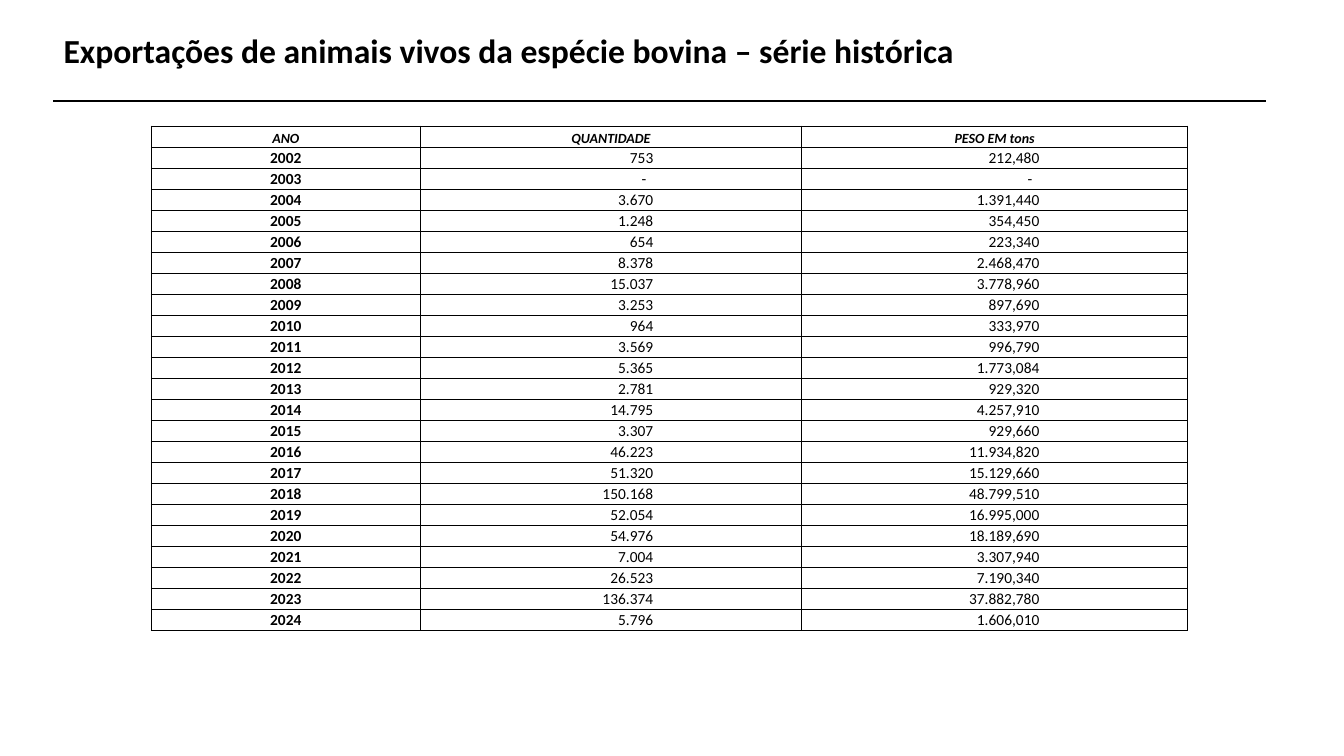
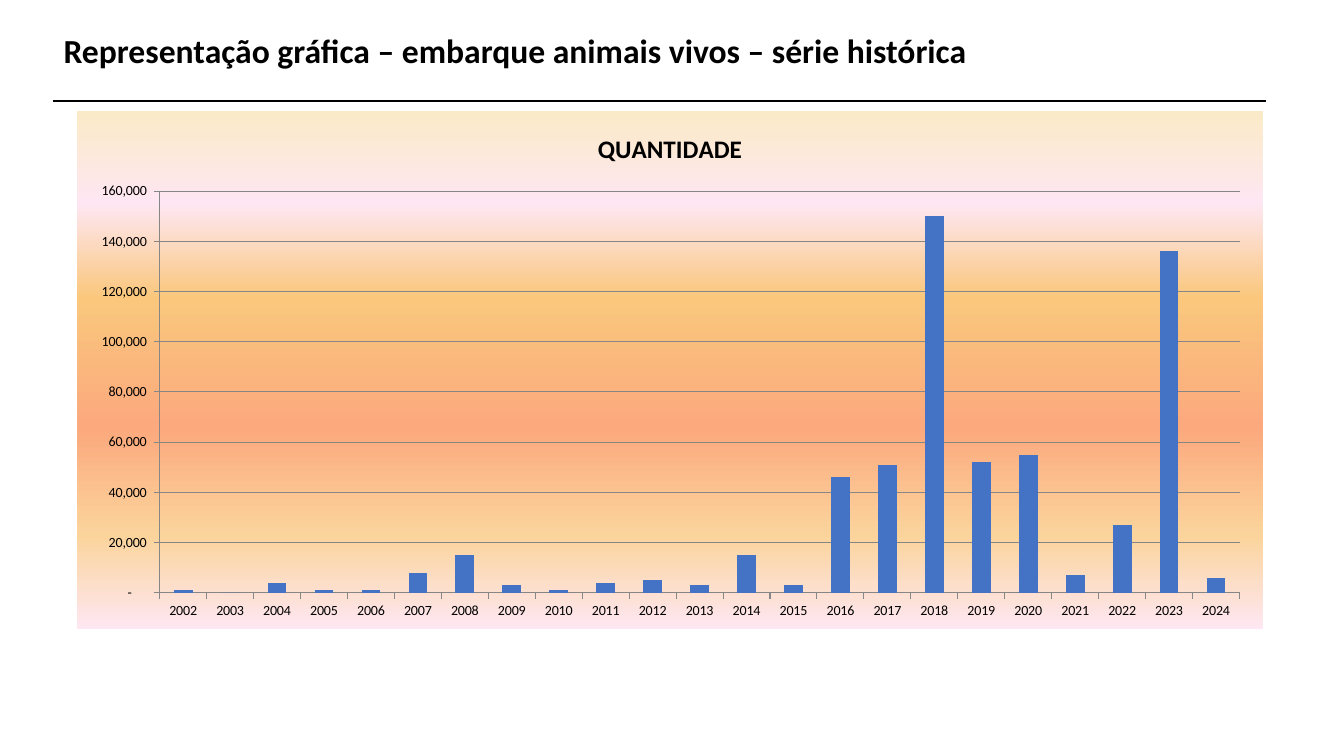
from lxml import etree
from pptx import Presentation
from pptx.chart.data import CategoryChartData
from pptx.dml.color import RGBColor
from pptx.enum.chart import XL_CHART_TYPE, XL_TICK_MARK
from pptx.enum.shapes import MSO_CONNECTOR
from pptx.enum.text import MSO_ANCHOR, MSO_AUTO_SIZE, PP_ALIGN
from pptx.oxml import parse_xml
from pptx.oxml.ns import nsdecls, qn
from pptx.util import Inches, Pt

COLUMN_CHART = XL_CHART_TYPE.COLUMN_CLUSTERED
TICK_OUTSIDE = XL_TICK_MARK.OUTSIDE
STRAIGHT = MSO_CONNECTOR.STRAIGHT
TOP, BOTTOM = MSO_ANCHOR.TOP, MSO_ANCHOR.BOTTOM
NO_AUTO_SIZE = MSO_AUTO_SIZE.NONE
LEFT, CENTER, RIGHT = PP_ALIGN.LEFT, PP_ALIGN.CENTER, PP_ALIGN.RIGHT

FONT = "Calibri"
COLORS = {"text": "000000", "bar": "4472C4", "grid": "868686"}
# Chart background: position in percent and colour
GRADIENT = [(0, "FBEAC7"), (18, "FEE7F2"), (36, "FAC77D"),
            (61, "FBA97D"), (82, "FBD49C"), (100, "FEE7F2")]

HEADERS = ["ANO", "QUANTIDADE", "PESO EM tons"]
EXPORTS = [
    ("2002", "753", "212,480"),
    ("2003", "-", "-"),
    ("2004", "3.670", "1.391,440"),
    ("2005", "1.248", "354,450"),
    ("2006", "654", "223,340"),
    ("2007", "8.378", "2.468,470"),
    ("2008", "15.037", "3.778,960"),
    ("2009", "3.253", "897,690"),
    ("2010", "964", "333,970"),
    ("2011", "3.569", "996,790"),
    ("2012", "5.365", "1.773,084"),
    ("2013", "2.781", "929,320"),
    ("2014", "14.795", "4.257,910"),
    ("2015", "3.307", "929,660"),
    ("2016", "46.223", "11.934,820"),
    ("2017", "51.320", "15.129,660"),
    ("2018", "150.168", "48.799,510"),
    ("2019", "52.054", "16.995,000"),
    ("2020", "54.976", "18.189,690"),
    ("2021", "7.004", "3.307,940"),
    ("2022", "26.523", "7.190,340"),
    ("2023", "136.374", "37.882,780"),
    ("2024", "5.796", "1.606,010"),
]


def style_font(font, size, bold=False, italic=False):
    font.name = FONT
    font.size = Pt(size)
    font.bold = bold
    font.italic = italic
    font.color.rgb = RGBColor.from_string(COLORS["text"])


def add_titled_page(title):
    page = deck.slides.add_slide(layout)
    box = page.shapes.title
    box.left, box.top = Inches(0.53), Inches(0.29)
    box.width, box.height = Inches(10.21), Inches(0.7)
    frame = box.text_frame
    frame.word_wrap = True
    frame.auto_size = NO_AUTO_SIZE
    frame.vertical_anchor = TOP
    para = frame.paragraphs[0]
    para.alignment = LEFT
    para.line_spacing = 0.9
    span = para.add_run()
    span.text = title
    style_font(span.font, 24, bold=True)
    return page


deck = Presentation()
deck.slide_width, deck.slide_height = Inches(13.33), Inches(7.5)
layout = deck.slide_layouts[5]

table_page = add_titled_page("Exportações de animais vivos da espécie bovina – série histórica")
chart_page = add_titled_page("Representação gráfica – embarque animais vivos – série histórica")

# Rule under the title, moved to the layout so that both slides share it
rule = table_page.shapes.add_connector(STRAIGHT, Inches(0.53), Inches(1), Inches(12.56), Inches(1))
rule.line.color.rgb = RGBColor.from_string(COLORS["text"])
rule.line.width = Pt(1.5)
etree.SubElement(rule.element.spPr, qn("a:effectLst"))
layout.shapes.element.append(rule.element)

# Table of exports by year
rows = [HEADERS] + EXPORTS
table = table_page.shapes.add_table(len(rows), len(HEADERS), Inches(1.5), Inches(1.25),
                                    Inches(10.28), Inches(5)).table
table.first_row = False
table.horz_banding = False
for column, width in zip(table.columns, [2.67, 3.78, 3.83]):
    column.width = Inches(width)

for row_index, row in enumerate(rows):
    for column_index, text in enumerate(row):
        is_header = row_index == 0
        is_number = not is_header and column_index > 0
        cell = table.cell(row_index, column_index)
        cell.margin_left = cell.margin_top = cell.margin_bottom = 0
        # Figures line up on the right, well inside the column
        cell.margin_right = Inches(1.47 + 0.07 * (text == "-")) if is_number else 0
        cell.vertical_anchor = BOTTOM
        cell.fill.background()
        para = cell.text_frame.paragraphs[0]
        para.alignment = RIGHT if is_number else CENTER
        span = para.add_run()
        span.text = text
        style_font(span.font, 10 if is_header else 11, bold=not is_number, italic=is_header)
        properties = cell._tc.get_or_add_tcPr()
        for position, side in enumerate(["lnL", "lnR", "lnT", "lnB"]):
            properties.insert(position, parse_xml(
                f'<a:{side} {nsdecls("a")} w="{Pt(0.5)}"><a:solidFill>'
                f'<a:srgbClr val="{COLORS["text"]}"/></a:solidFill></a:{side}>'))

# Column chart of the quantities, rounded to thousands
chart_data = CategoryChartData()
chart_data.categories = [year for year, quantity, weight in EXPORTS]
chart_data.add_series("QUANTIDADE", [
    0 if quantity == "-" else round(int(quantity.replace(".", "")), -3)
    for year, quantity, weight in EXPORTS])
chart = chart_page.shapes.add_chart(COLUMN_CHART, Inches(0.76), Inches(1.1), Inches(11.77),
                                    Inches(5.14), chart_data).chart
style_font(chart.font, 10)
chart.has_legend = False
chart.has_title = True
span = chart.chart_title.text_frame.paragraphs[0].add_run()
span.text = "QUANTIDADE"
style_font(span.font, 18, bold=True)

plot = chart.plots[0]
plot.gap_width = 150
plot.vary_by_categories = False
series_fill = plot.series[0].format.fill
series_fill.solid()
series_fill.fore_color.rgb = RGBColor.from_string(COLORS["bar"])

value_axis = chart.value_axis
value_axis.minimum_scale, value_axis.maximum_scale = 0, 160000
value_axis.major_unit = 20000
value_axis.has_major_gridlines = True
value_axis.tick_labels.number_format = '_-* #,##0_-;\\-* #,##0_-;_-* "-"??_-;_-@_'
value_axis.tick_labels.number_format_is_linked = False
for axis in (chart.category_axis, value_axis):
    axis.major_tick_mark = TICK_OUTSIDE
    style_font(axis.tick_labels.font, 10)
for lines in (chart.category_axis, value_axis, value_axis.major_gridlines):
    lines.format.line.color.rgb = RGBColor.from_string(COLORS["grid"])
    lines.format.line.width = Pt(0.75)

# Gradient background and plot position
chart_element = chart.element.find(qn("c:chart"))
stops = "".join(f'<a:gs pos="{percent * 1000}"><a:srgbClr val="{color}"/></a:gs>'
                for percent, color in GRADIENT)
chart_element.addnext(parse_xml(
    f'<c:spPr {nsdecls("c", "a")}><a:gradFill><a:gsLst>{stops}</a:gsLst>'
    '<a:lin ang="5400000" scaled="0"/></a:gradFill><a:ln><a:noFill/></a:ln></c:spPr>'))
plot_area = chart_element.find(qn("c:plotArea"))
for automatic_layout in plot_area.findall(qn("c:layout")):
    plot_area.remove(automatic_layout)
plot_area.insert(0, parse_xml(
    f'<c:layout {nsdecls("c")}><c:manualLayout><c:layoutTarget val="inner"/>'
    '<c:xMode val="edge"/><c:yMode val="edge"/><c:x val="0.07"/><c:y val="0.155"/>'
    '<c:w val="0.91"/><c:h val="0.775"/></c:manualLayout></c:layout>'))

deck.save("out.pptx")
